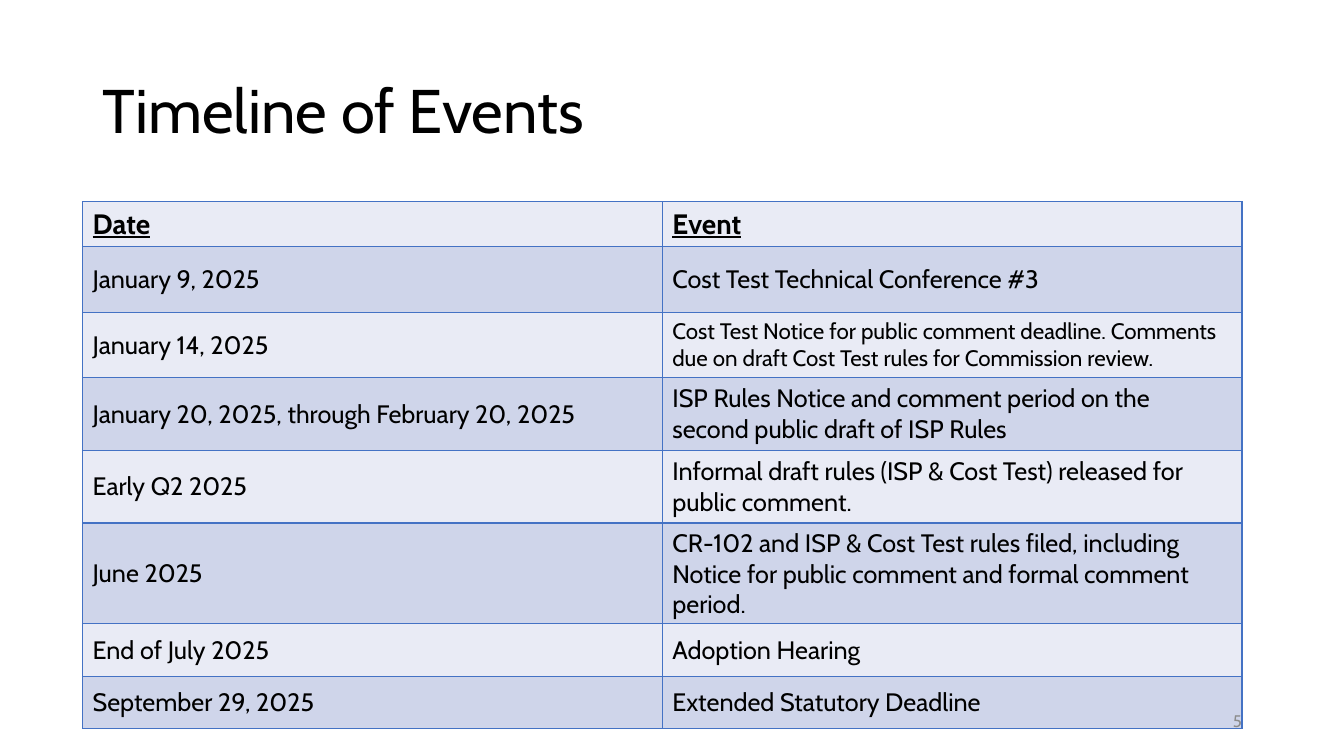
import pptx
import pptx.util
import pptx.dml.color
import pptx.enum.text
import pptx.oxml.ns
from lxml import etree

Cm = pptx.util.Cm
Pt = pptx.util.Pt
Align = pptx.enum.text.PP_ALIGN
Anchor = pptx.enum.text.MSO_ANCHOR

# Content
TITLE = "Timeline of Events"
PAGE_NUMBER = "5"
HEADINGS = ("Date", "Event")
EVENTS = [  # date, event, row height in cm
    ("January 9, 2025", "Cost Test Technical Conference #3", 1.65),
    ("January 14, 2025", "Cost Test Notice for public comment deadline. "
     "Comments due on draft Cost Test rules for Commission review.", 1.65),
    ("January 20, 2025, through February 20, 2025", "ISP Rules Notice and "
     "comment period on the second public draft of ISP Rules", 1.83),
    ("Early Q2 2025", "Informal draft rules (ISP & Cost Test) released for "
     "public comment.", 1.83),
    ("June 2025", "CR-102 and ISP & Cost Test rules filed, including Notice "
     "for public comment and formal comment period.", 1.83),
    ("End of July 2025", "Adoption Hearing", 1.32),
    ("September 29, 2025", "Extended Statutory Deadline", 1.32),
]

# Formats
BANDS = ("E9EBF5", "CFD5EA")
BORDER = "4472C4"
BORDER_WIDTH = Pt(1)
HEADING_HEIGHT = 1.14
COLUMN_WIDTH = 14.61
TITLE_FORMAT = {"size": Pt(44)}
HEADING_FORMAT = {"size": Pt(20), "bold": True, "underline": True}
BODY_FORMAT = {"size": Pt(18), "bold": False}
NOTICE_FORMAT = {"size": Pt(16), "bold": False}
NOTICE_CELL = (2, 1)


def color(value):
    return pptx.dml.color.RGBColor.from_string(value)


def write(frame, text, formats, ink="000000"):
    para = frame.paragraphs[0]
    span = para.add_run()
    span.text = text
    for name, value in {"name": "Cabin", **formats}.items():
        setattr(span.font, name, value)
    span.font.color.rgb = color(ink)
    return para


def add_text(page, place, text, formats, ink="000000"):
    box = page.shapes.add_textbox(*(Cm(length) for length in place))
    box.text_frame.word_wrap = True
    box.text_frame.vertical_anchor = Anchor.MIDDLE
    return write(box.text_frame, text, formats, ink)


def add_borders(cell):
    properties = cell._tc.get_or_add_tcPr()
    qn = pptx.oxml.ns.qn
    for side in ("lnL", "lnR", "lnT", "lnB"):
        line = etree.SubElement(properties, qn("a:" + side), w=str(BORDER_WIDTH))
        fill = etree.SubElement(line, qn("a:solidFill"))
        etree.SubElement(fill, qn("a:srgbClr"), val=BORDER)


def add_timeline(page):
    rows = [(*HEADINGS, HEADING_HEIGHT), *EVENTS]
    height = sum(row[-1] for row in rows)
    table = page.shapes.add_table(len(rows), len(HEADINGS), Cm(2.08), Cm(5.08),
                                  Cm(COLUMN_WIDTH * 2), Cm(height)).table
    for column in table.columns:
        column.width = Cm(COLUMN_WIDTH)
    for r, (*texts, row_height) in enumerate(rows):
        table.rows[r].height = Cm(row_height)
        for c, text in enumerate(texts):
            cell = table.cell(r, c)
            add_borders(cell)
            cell.fill.solid()
            cell.fill.fore_color.rgb = color(BANDS[r % 2])
            cell.vertical_anchor = Anchor.MIDDLE
            formats = HEADING_FORMAT if r == 0 else BODY_FORMAT
            if (r, c) == NOTICE_CELL:
                formats = NOTICE_FORMAT
            write(cell.text_frame, text, formats)


def main():
    deck = pptx.Presentation()
    deck.slide_width, deck.slide_height = Cm(33.87), Cm(19.05)
    page = deck.slides.add_slide(deck.slide_layouts[6])

    # Title, table, page number
    title = add_text(page, (2.34, 1.02, 29.21, 3.68), TITLE, TITLE_FORMAT)
    title.line_spacing = 0.9
    add_timeline(page)
    number = add_text(page, (23.93, 17.65, 7.62, 1.02), PAGE_NUMBER,
                      {"size": Pt(12)}, "8C8C8C")
    number.alignment = Align.RIGHT

    deck.save("out.pptx")


if __name__ == "__main__":
    main()
